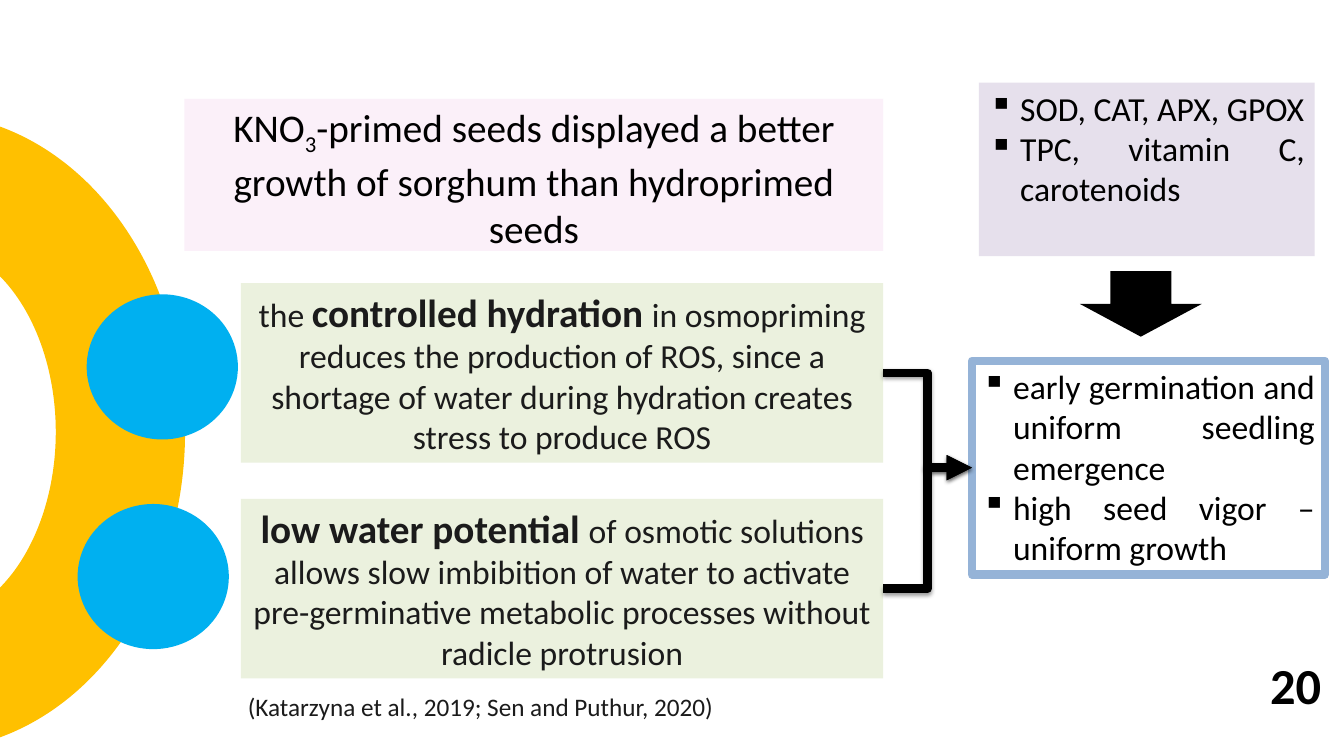
from lxml.etree import SubElement
from pptx import Presentation
from pptx.dml.color import RGBColor
from pptx.enum.shapes import MSO_CONNECTOR, MSO_SHAPE
from pptx.enum.text import MSO_ANCHOR, PP_ALIGN
from pptx.oxml import parse_xml
from pptx.oxml.ns import nsdecls, qn
from pptx.util import Pt

PX = 9144
INDENT = 31
FONT = "Calibri"
BLACK = RGBColor(0x00, 0x00, 0x00)
INK = RGBColor(0x1B, 0x1B, 0x1B)
GOLD = RGBColor(0xFF, 0xC0, 0x00)
SKY = RGBColor(0x00, 0xB0, 0xF0)
SAGE = RGBColor(0xEB, 0xF1, 0xDE)
PINK = RGBColor(0xE5, 0x9E, 0xDD)
LILAC = RGBColor(0xE6, 0xE0, 0xEC)
STEEL = RGBColor(0x95, 0xB3, 0xD7)


def emu(*lengths):
    """Turn px lengths into EMU."""
    return [n * PX for n in lengths]


def add_block(slide, kind, box, fill=None, line=None):
    """Add a flat preset shape with an optional fill and thick outline."""
    sp = slide.shapes.add_shape(kind, *emu(*box))
    sp.shadow.inherit = False
    if fill is None:
        sp.fill.background()
    else:
        sp.fill.solid()
        sp.fill.fore_color.rgb = fill
    if line is None:
        sp.line.fill.background()
    else:
        sp.line.color.rgb = line
        sp.line.width = Pt(6)
        SubElement(sp.line._get_or_add_ln(), qn("a:round"))
    return sp


def write_runs(p, runs, color, align):
    """Fill a paragraph with (text, size, bold) runs."""
    p.alignment = align
    for text, size, bold in runs:
        r = p.add_run()
        r.text = text
        r.font.name = FONT
        r.font.size = Pt(size)
        r.font.bold = bold
        r.font.color.rgb = color


def add_statement(slide, box, fill, runs, color):
    """Add a filled box with a centred statement."""
    sp = add_block(slide, MSO_SHAPE.RECTANGLE, box, fill)
    tf = sp.text_frame
    tf.word_wrap = True
    tf.vertical_anchor = MSO_ANCHOR.TOP
    write_runs(tf.paragraphs[0], runs, color, PP_ALIGN.CENTER)
    return sp


def add_headline(slide, box):
    """Add the headline on its translucent band."""
    runs = [("KNO", 28, False), ("3", 28, False),
            ("-primed seeds displayed a better growth of sorghum than hydroprimed seeds", 28, False)]
    sp = add_statement(slide, box, PINK, runs, BLACK)
    sp.text_frame.paragraphs[0].runs[1].font._element.set("baseline", "-25000")
    color = sp.fill._xPr.find(qn("a:solidFill"))[0]
    SubElement(color, qn("a:alpha"), val="15000")


def add_bullets(slide, box, items, fill=None, line=None):
    """Add a box with a justified square-bulleted list."""
    sp = add_block(slide, MSO_SHAPE.RECTANGLE, box, fill, line)
    tf = sp.text_frame
    tf.word_wrap = True
    tf.vertical_anchor = MSO_ANCHOR.TOP
    for i, item in enumerate(items):
        p = tf.add_paragraph() if i else tf.paragraphs[0]
        pPr = p._p.get_or_add_pPr()
        pPr.set("marL", str(INDENT * PX))
        pPr.set("indent", str(-INDENT * PX))
        SubElement(pPr, qn("a:buChar"), char="▪")
        write_runs(p, [(item, 24, False)], BLACK, PP_ALIGN.JUSTIFY)


def add_label(slide, box, text, size, bold, color, align):
    """Add a one-line text box."""
    tf = slide.shapes.add_textbox(*emu(*box)).text_frame
    tf.word_wrap = True
    write_runs(tf.paragraphs[0], [(text, size, bold)], color, align)


def add_link(slide, start, end):
    """Add a thick elbow arrow with a soft shadow."""
    cx = slide.shapes.add_connector(MSO_CONNECTOR.ELBOW, *emu(*start, *end))
    cx.line.color.rgb = BLACK
    cx.line.width = Pt(6)
    ln = cx.line._get_or_add_ln()
    SubElement(ln, qn("a:round"))
    SubElement(ln, qn("a:tailEnd"), type="triangle")
    cx._element.spPr.append(parse_xml(
        f'<a:effectLst {nsdecls("a")}><a:outerShdw blurRad="{Pt(3.1)}" dist="{Pt(1.6)}" '
        'dir="5400000" rotWithShape="0"><a:srgbClr val="000000"><a:alpha val="38000"/>'
        '</a:srgbClr></a:outerShdw></a:effectLst>'))


def add_arc(slide, box):
    """Add the gold half ring that opens to the left."""
    add_block(slide, MSO_SHAPE.BLOCK_ARC, box, GOLD).rotation = 90


def add_mechanisms(slide, box):
    """Add the two mechanism statements with their discs."""
    left, top, width, height = box
    pitch = 214
    statements = [
        (-153, 11, [("the ", 24, False), ("controlled hydration ", 28, True),
                    ("in osmopriming reduces the production of ROS, since a shortage of water "
                     "during hydration creates stress to produce ROS", 24, False)]),
        (-162, 5, [("low water potential ", 28, True),
                   ("of osmotic solutions allows slow imbibition of water to activate "
                    "pre-germinative metabolic processes without radicle protrusion", 24, False)]),
    ]
    card_h = height - pitch
    for i, (disc_dx, disc_dy, runs) in enumerate(statements):
        y = top + i * pitch
        add_statement(slide, (left, y, width, card_h), SAGE, runs, INK)
        add_block(slide, MSO_SHAPE.OVAL, (left + disc_dx, y + disc_dy, 150, 144), SKY)
    return [(left + width, top + i * pitch + card_h // 2) for i in range(len(statements))]


def add_outcomes(slide, box):
    """Add the antioxidant list, the down arrow and the outcome list."""
    left, top, width, height = box
    result_h = 212
    result_y = top + height - result_h
    add_bullets(slide, (left, result_y, width, result_h),
                ["early germination and uniform seedling emergence",
                 "high seed vigor – uniform growth"], line=STEEL)
    add_bullets(slide, (left + 7, top, 333, 172),
                ["SOD, CAT, APX, GPOX", "TPC, vitamin C, carotenoids"], fill=LILAC)
    add_block(slide, MSO_SHAPE.DOWN_ARROW, (left + 107, top + 187, 121, 65), BLACK)
    return left, result_y + result_h // 2


def main():
    """Build the slide and save it."""
    prs = Presentation()
    prs.slide_width, prs.slide_height = emu(1333, 750)
    slide = prs.slides.add_slide(prs.slide_layouts[6])
    add_arc(slide, (-389, 172, 632, 513))
    add_headline(slide, (183, 98, 693, 151))
    starts = add_mechanisms(slide, (239, 281, 637, 392))
    end = add_outcomes(slide, (964, 82, 350, 488))
    for start in starts:
        add_link(slide, start, end)
    add_label(slide, (236, 681, 811, 40), "(Katarzyna et al., 2019; Sen and Puthur, 2020)",
              18, False, INK, PP_ALIGN.LEFT)
    add_label(slide, (1236, 644, 98, 71), "20", 36, True, BLACK, PP_ALIGN.CENTER)
    prs.save("out.pptx")


if __name__ == "__main__":
    main()
